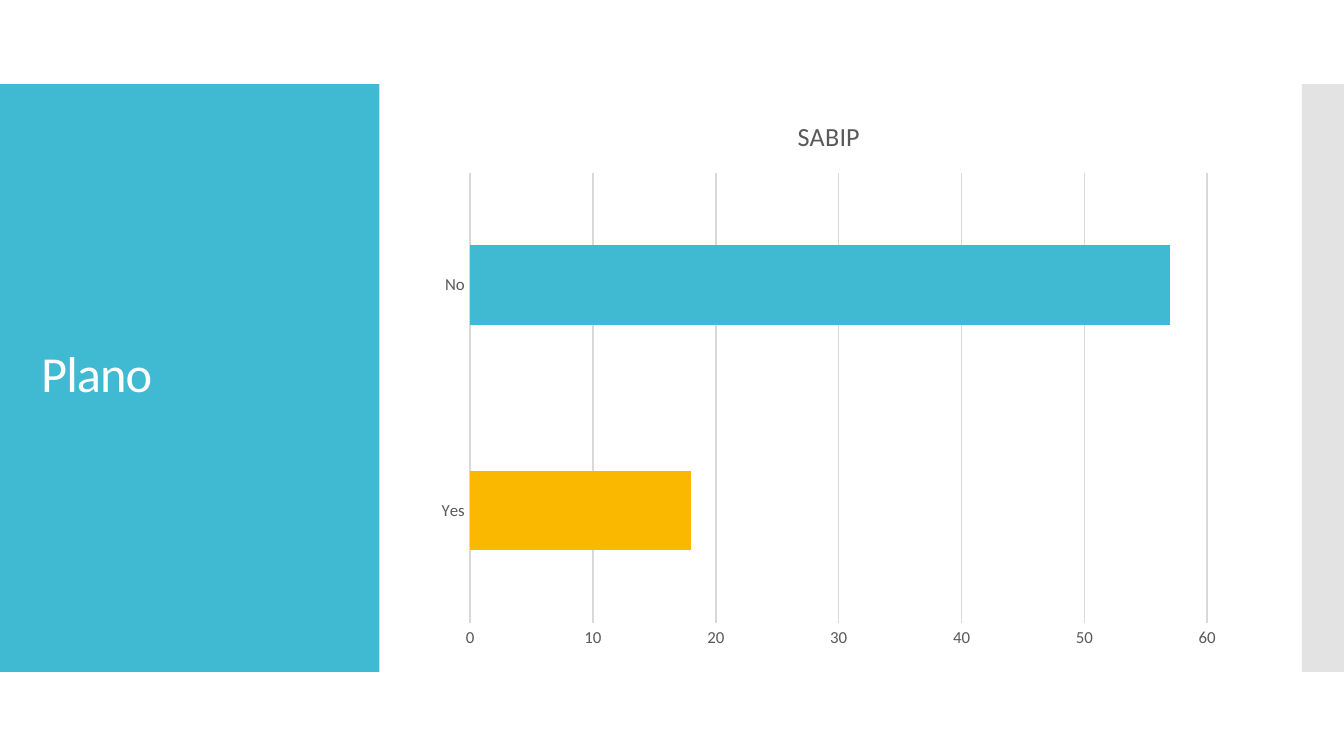
from typing import NamedTuple

from lxml.etree import SubElement
from pptx import Presentation
from pptx.chart.data import CategoryChartData
from pptx.dml.color import RGBColor
from pptx.enum.chart import XL_CHART_TYPE as Kind, XL_TICK_MARK as Tick
from pptx.enum.shapes import MSO_SHAPE as Form
from pptx.enum.text import MSO_ANCHOR as Anchor
from pptx.oxml.ns import qn
from pptx.util import Pt

PX = 9525  # EMU per px, 96 px to the inch
FONT = "Calibri"
TEAL = RGBColor(0x40, 0xBA, 0xD2)
GOLD = RGBColor(0xFA, 0xB9, 0x00)
GREY = RGBColor(0xC8, 0xC8, 0xC8)
RULE = RGBColor(0xD9, 0xD9, 0xD9)
INK = RGBColor(0x59, 0x59, 0x59)
WHITE = RGBColor(0xFF, 0xFF, 0xFF)


class Box(NamedTuple):
    x: int
    y: int
    w: int
    h: int

    def emu(self) -> list[int]:
        return [n * PX for n in self]


class Panel(NamedTuple):
    box: Box
    color: RGBColor
    alpha: int = 100


class Bar(NamedTuple):
    name: str
    value: int
    color: RGBColor


PANELS = [
    Panel(Box(0, 60, 271, 420), TEAL),
    Panel(Box(930, 60, 30, 420), GREY, 50),
]
BARS = [Bar("Yes", 18, GOLD), Bar("No", 57, TEAL)]


def style(font, size: float, color: RGBColor) -> None:
    font.name, font.size, font.bold = FONT, Pt(size), False
    font.color.rgb = color


def draw_panel(slide, panel: Panel) -> None:
    shape = slide.shapes.add_shape(Form.RECTANGLE, *panel.box.emu())
    shape.shadow.inherit = False
    shape.line.fill.background()
    shape.fill.solid()
    shape.fill.fore_color.rgb = panel.color
    if panel.alpha < 100:
        color = shape.fill._xPr.find(".//" + qn("a:srgbClr"))
        SubElement(color, qn("a:alpha"), val=str(panel.alpha * 1000))


def draw_title(slide, box: Box, text: str) -> None:
    frame = slide.shapes.add_textbox(*box.emu()).text_frame
    frame.word_wrap = True
    frame.vertical_anchor = Anchor.MIDDLE
    para = frame.paragraphs[0]
    para.line_spacing = 0.9
    run = para.add_run()
    run.text = text
    style(run.font, 27, WHITE)
    run.font._element.set("spc", "-50")


def draw_chart(slide, box: Box, title: str, bars: list[Bar]) -> None:
    data = CategoryChartData()
    data.categories = [bar.name for bar in bars]
    data.add_series("Series 1", [bar.value for bar in bars])
    chart = slide.shapes.add_chart(Kind.BAR_CLUSTERED, *box.emu(), data).chart
    style(chart.font, 10, INK)
    chart.has_legend = False

    # Heading
    chart.has_title = True
    run = chart.chart_title.text_frame.paragraphs[0].add_run()
    run.text = title
    style(run.font, 14, INK)
    chart.chart_title.include_in_layout = False

    # Bars
    plot = chart.plots[0]
    plot.gap_width = 182
    plot.vary_by_categories = False
    series = plot.series[0]
    series.format.fill.solid()
    series.format.fill.fore_color.rgb = TEAL
    for i, bar in enumerate(bars):
        fill = series.points[i].format.fill
        fill.solid()
        fill.fore_color.rgb = bar.color

    # Axes and grid
    cat, val = chart.category_axis, chart.value_axis
    for axis in (cat, val):
        axis.major_tick_mark = axis.minor_tick_mark = Tick.NONE
        style(axis.tick_labels.font, 9, INK)
    cat.has_major_gridlines = False
    val.has_major_gridlines = True
    val.minimum_scale, val.maximum_scale, val.major_unit = 0, 60, 10
    val.format.line.fill.background()
    for line in (cat.format.line, val.major_gridlines.format.line):
        line.color.rgb = RULE
        line.width = Pt(0.75)


def main() -> None:
    deck = Presentation()
    deck.slide_width, deck.slide_height = 960 * PX, 540 * PX
    slide = deck.slides.add_slide(deck.slide_layouts[6])
    for panel in PANELS:
        draw_panel(slide, panel)
    draw_title(slide, Box(20, 88, 232, 362), "Plano")
    draw_chart(slide, Box(304, 68, 576, 403), "SABIP", BARS)
    deck.save("out.pptx")


if __name__ == "__main__":
    main()
